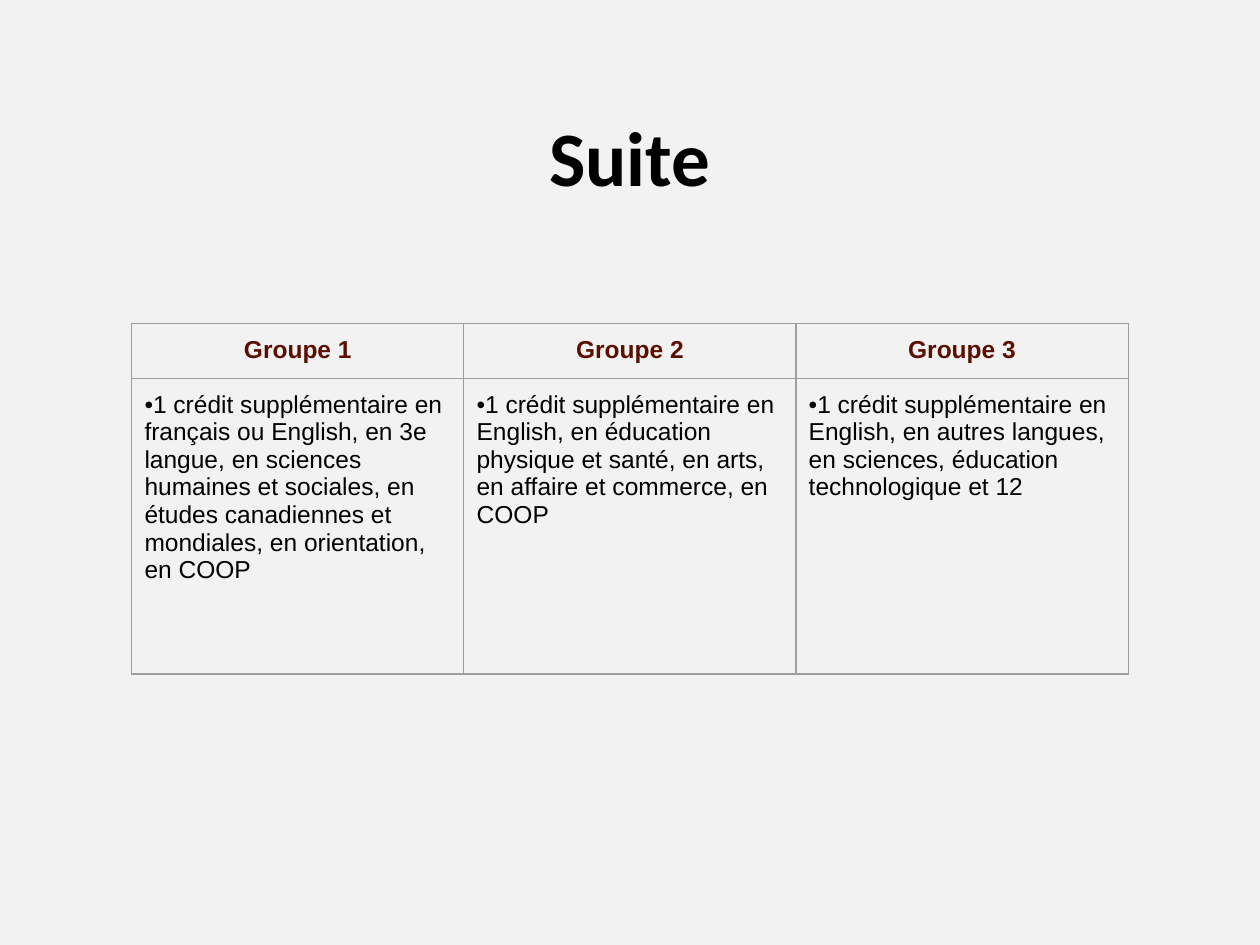
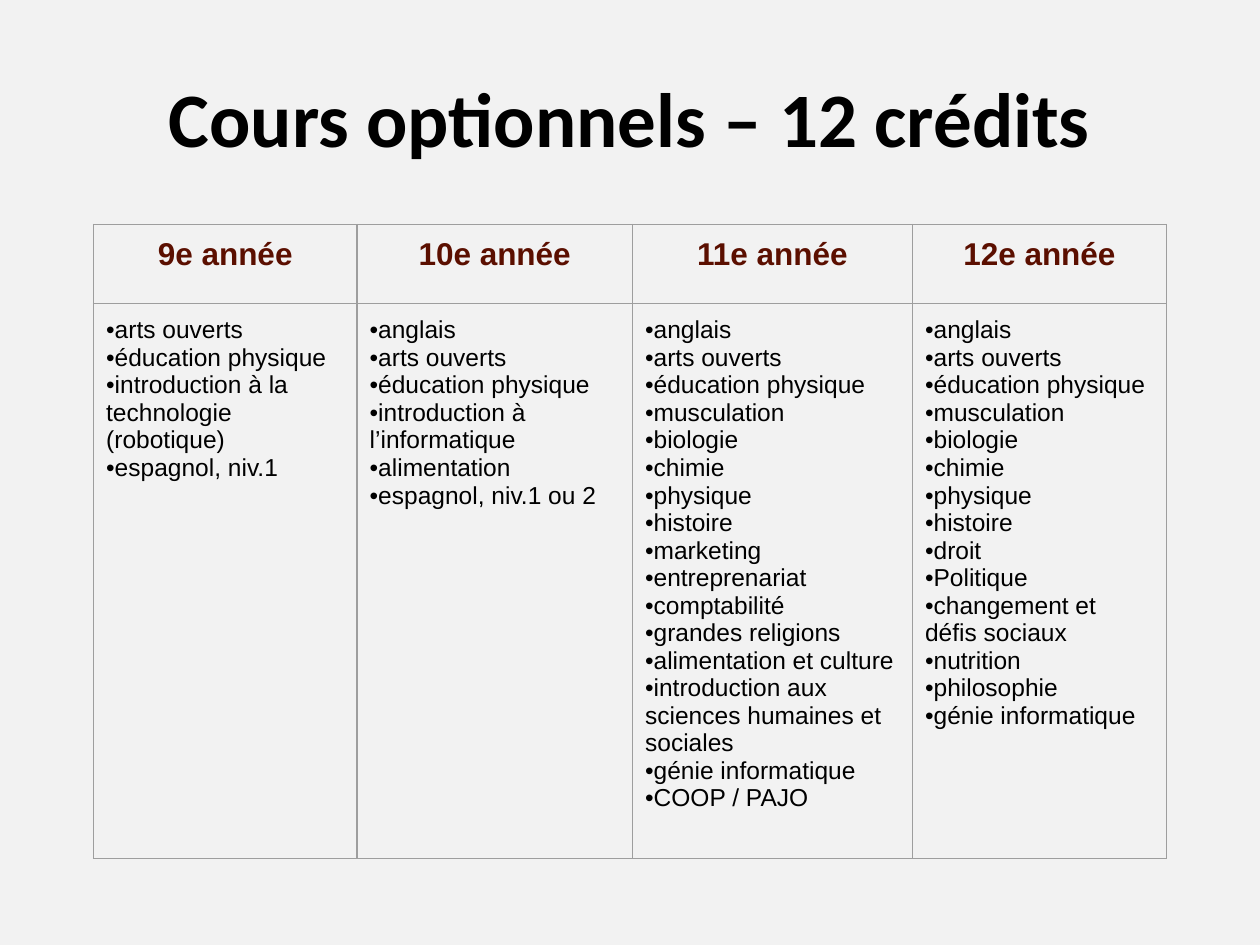
import pptx
import pptx.util
import pptx.dml.color
import pptx.enum.text
import pptx.oxml
import pptx.oxml.ns
from lxml import etree

Pt = pptx.util.Pt
RGBColor = pptx.dml.color.RGBColor
PP_ALIGN = pptx.enum.text.PP_ALIGN
MSO_ANCHOR = pptx.enum.text.MSO_ANCHOR
qn = pptx.oxml.ns.qn

BACKGROUND = RGBColor(0xF2, 0xF2, 0xF2)
BLACK = RGBColor(0, 0, 0)
MAROON = RGBColor(0x5B, 0x0F, 0x00)
BORDER = RGBColor(0x9E, 0x9E, 0x9E)

TITLE_FONT = "Calibri"
TABLE_FONT = "Arial"
BODY_SIZE = 14
CELL_MARGIN = Pt(7.3)

GROUPS = {
    "Groupe 1": ["1 crédit supplémentaire en français ou English, en 3e langue, "
                 "en sciences humaines et sociales, en études canadiennes et "
                 "mondiales, en orientation, en COOP"],
    "Groupe 2": ["1 crédit supplémentaire en English, en éducation physique et "
                 "santé, en arts, en affaire et commerce, en COOP"],
    "Groupe 3": ["1 crédit supplémentaire en English, en autres langues, "
                 "en sciences, éducation technologique et 12"],
}

SENIOR_COURSES = ["anglais", "arts ouverts", "éducation physique", "musculation",
                  "biologie", "chimie", "physique", "histoire"]
COURSES = {
    "9e année": ["arts ouverts", "éducation physique",
                 "introduction à la technologie (robotique)", "espagnol, niv.1"],
    "10e année": ["anglais", "arts ouverts", "éducation physique",
                  "introduction à l’informatique", "alimentation",
                  "espagnol, niv.1 ou 2"],
    "11e année": SENIOR_COURSES + [
        "marketing", "entreprenariat", "comptabilité", "grandes religions",
        "alimentation et culture", "introduction aux sciences humaines et sociales",
        "génie informatique", "COOP / PAJO"],
    "12e année": SENIOR_COURSES + [
        "droit", "Politique", "changement et défis sociaux", "nutrition",
        "philosophie", "génie informatique"],
}


def add_run(p, text, font, size, color, bold=False):
    r = p.add_run()
    r.text = text
    r.font.name = font
    r.font.size = Pt(size)
    r.font.bold = bold
    r.font.color.rgb = color


def add_title(s, text, top):
    tf = s.shapes.add_textbox(Pt(36), Pt(top), Pt(648), Pt(90)).text_frame
    tf.word_wrap = True
    tf.vertical_anchor = MSO_ANCHOR.MIDDLE
    p = tf.paragraphs[0]
    p.alignment = PP_ALIGN.CENTER
    add_run(p, text, TITLE_FONT, 44, BLACK, bold=True)


def style_cell(cell):
    """Set the margins, fill and four thin borders of a cell."""
    cell.margin_left = cell.margin_right = CELL_MARGIN
    cell.margin_top = cell.margin_bottom = CELL_MARGIN
    cell.fill.solid()
    cell.fill.fore_color.rgb = BACKGROUND
    tc_pr = cell._tc.get_or_add_tcPr()
    for i, side in enumerate(("a:lnL", "a:lnR", "a:lnT", "a:lnB")):
        ln = etree.Element(qn(side), w=str(Pt(0.75)))
        fill = etree.SubElement(ln, qn("a:solidFill"))
        etree.SubElement(fill, qn("a:srgbClr"), val=str(BORDER))
        tc_pr.insert(i, ln)


def fill_header(cell, text, size):
    p = cell.text_frame.paragraphs[0]
    p.alignment = PP_ALIGN.CENTER
    add_run(p, text, TABLE_FONT, size, MAROON, bold=True)


def fill_bullets(cell, items):
    tf = cell.text_frame
    for i, item in enumerate(items):
        p = tf.add_paragraph() if i else tf.paragraphs[0]
        p_pr = p._p.get_or_add_pPr()
        p_pr.set("marL", "0")
        p_pr.set("indent", "0")
        etree.SubElement(p_pr, qn("a:buFont"), typeface=TABLE_FONT)
        etree.SubElement(p_pr, qn("a:buChar"), char="•")
        add_run(p, item, TABLE_FONT, BODY_SIZE, BLACK)


def add_list_table(s, lists, left, top, widths, heights, header_size):
    """Add a table with one headed, bulleted list in each column."""
    sp = s.shapes.add_table(2, len(lists), Pt(left), Pt(top),
                            Pt(sum(widths)), Pt(sum(heights)))
    table = sp.table
    table.first_row = table.horz_banding = False
    for row, height in zip(table.rows, heights):
        row.height = Pt(height)
    for c, (header, items) in enumerate(lists.items()):
        table.columns[c].width = Pt(widths[c])
        for r in range(2):
            style_cell(table.cell(r, c))
        fill_header(table.cell(0, c), header, header_size)
        fill_bullets(table.cell(1, c), items)


def add_slide(prs, title, title_top):
    s = prs.slides.add_slide(prs.slide_layouts[6])
    s.background.fill.solid()
    s.background.fill.fore_color.rgb = BACKGROUND
    add_title(s, title, title_top)
    return s


def main():
    prs = pptx.Presentation()
    prs.slide_width, prs.slide_height = Pt(720), Pt(540)

    s = add_slide(prs, "Suite", 44)
    add_list_table(s, GROUPS, 75.3, 184.8, [189.8] * 3, [30.8, 169], 14)

    s = add_slide(prs, "Cours optionnels – 12 crédits", 21.6)
    add_list_table(s, COURSES, 53.4, 128.2, [150.6, 157.4, 160, 145.2],
                   [45.4, 283], 18)

    prs.save("out.pptx")


if __name__ == "__main__":
    main()
